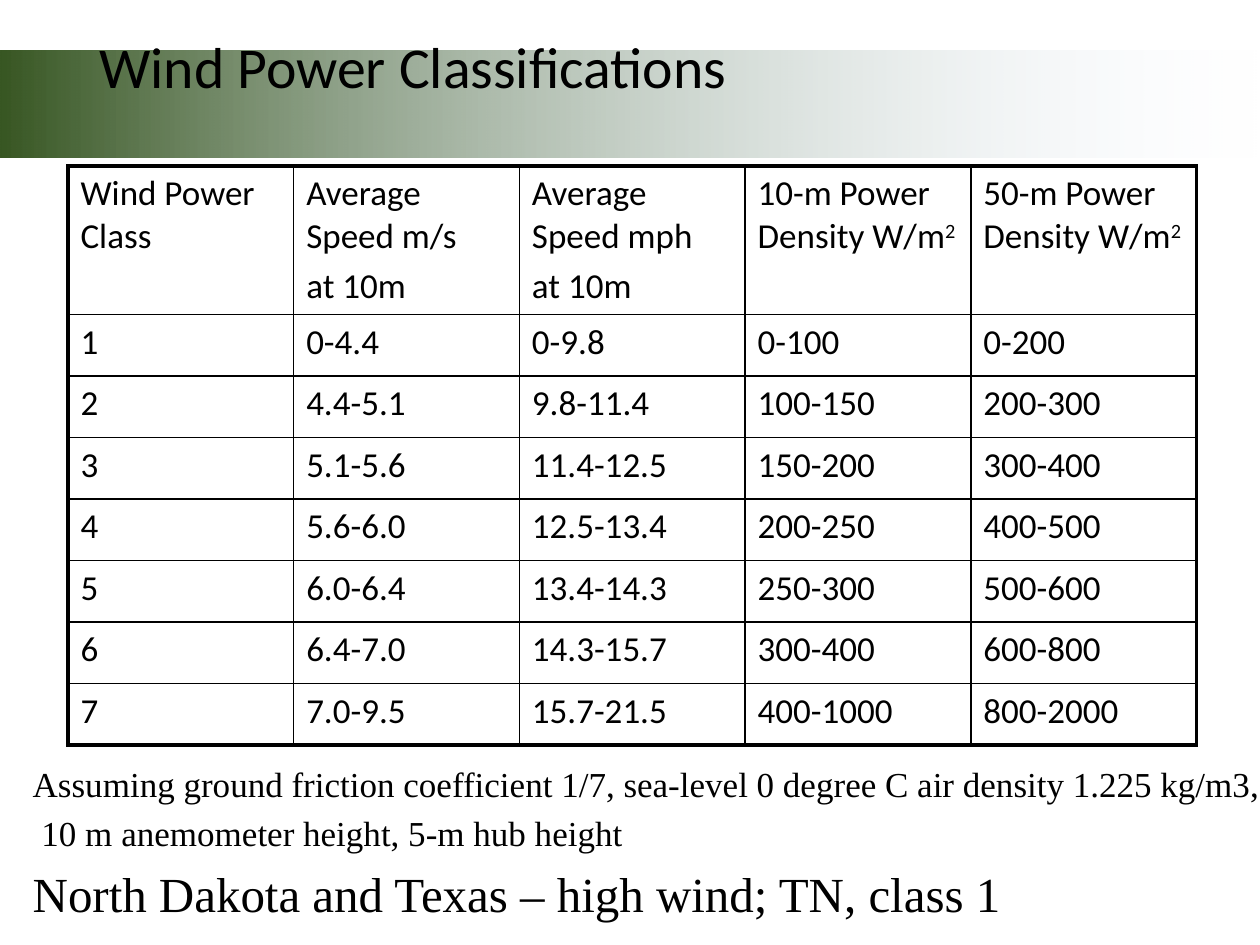
from lxml.etree import SubElement
from pptx import Presentation
from pptx.dml.color import RGBColor
from pptx.enum.shapes import MSO_SHAPE
from pptx.enum.text import MSO_ANCHOR, MSO_AUTO_SIZE, PP_ALIGN
from pptx.oxml.ns import qn
from pptx.util import Cm, Pt

COLORS = {"text": "000000", "border": "000000", "green": "385723", "pale": "E1EBFB"}
TITLE = "Wind Power Classifications"
TITLE_SIZE = 33
HEADERS = [
    [["Wind Power Class"]],
    [["Average Speed m/s"], ["at 10m"]],
    [["Average Speed mph"], ["at 10m"]],
    [["10-m Power Density W/m", "2"]],
    [["50-m Power Density W/m", "2"]],
]
CLASSES = [
    ("1", "0-4.4", "0-9.8", "0-100", "0-200"),
    ("2", "4.4-5.1", "9.8-11.4", "100-150", "200-300"),
    ("3", "5.1-5.6", "11.4-12.5", "150-200", "300-400"),
    ("4", "5.6-6.0", "12.5-13.4", "200-250", "400-500"),
    ("5", "6.0-6.4", "13.4-14.3", "250-300", "500-600"),
    ("6", "6.4-7.0", "14.3-15.7", "300-400", "600-800"),
    ("7", "7.0-9.5", "15.7-21.5", "400-1000", "800-2000"),
]
NOTES = [
    ("Assuming ground friction coefficient 1/7, sea-level 0 degree C air density 1.225 kg/m3,", 20),
    (" 10 m anemometer height, 5-m hub height", 20),
    ("North Dakota and Texas – high wind; TN, class 1", 28),
]
COL_W, HEAD_H, ROW_H = 4.55, 2.82, 1.24
INNER, OUTER = 1, 2.25


def rgb(name):
    return RGBColor.from_string(COLORS[name])


def add_run(p, text, size, name="Calibri"):
    r = p.add_run()
    r.text = text
    for key, value in {"size": Pt(size), "name": name, "bold": False}.items():
        setattr(r.font, key, value)
    r.font.color.rgb = rgb("text")
    return r


def add_paragraph(tf, i, size):
    p = tf.paragraphs[0] if i == 0 else tf.add_paragraph()
    p.alignment = PP_ALIGN.LEFT
    p.space_before = Pt(size * 0.2)
    return p


def set_borders(cell, widths):
    tcPr = cell._tc.get_or_add_tcPr()
    for side, width in widths.items():
        ln = SubElement(tcPr, qn(f"a:ln{side}"), w=str(Pt(width)))
        fill = SubElement(ln, qn("a:solidFill"))
        SubElement(fill, qn("a:srgbClr"), val=COLORS["border"])


def add_band(s):
    sp = s.shapes.add_shape(MSO_SHAPE.RECTANGLE, 0, Cm(1.02), Cm(25.4), Cm(2.16))
    sp.shadow.inherit = False
    sp.line.fill.background()
    sp.fill.gradient()
    sp.fill.gradient_angle = 0
    for stop, name in zip(sp.fill.gradient_stops, ("green", "pale")):
        stop.color.rgb = rgb(name)
    last = list(sp._element.spPr.iter(qn("a:srgbClr")))[-1]
    SubElement(last, qn("a:alpha"), val="0")


def add_title(s):
    sp = s.shapes.title
    s.shapes._spTree.append(sp._element)
    box = {"left": 1.75, "top": 1.02, "width": 21.9, "height": 2.16}
    for key, value in box.items():
        setattr(sp, key, Cm(value))
    tf = sp.text_frame
    tf.vertical_anchor = MSO_ANCHOR.MIDDLE
    tf.auto_size = MSO_AUTO_SIZE.NONE
    p = tf.paragraphs[0]
    p.alignment = PP_ALIGN.LEFT
    p.line_spacing = 0.9
    add_run(p, TITLE, TITLE_SIZE)
    p.add_line_break()
    size = str(TITLE_SIZE * 100)
    SubElement(p._p[-1], qn("a:rPr"), sz=size)
    SubElement(p._p, qn("a:endParaRPr"), sz=size)


def add_classes(s):
    rows = [HEADERS] + [[[[value]] for value in row] for row in CLASSES]
    n_rows, n_cols = len(rows), len(HEADERS)
    height = HEAD_H + ROW_H * len(CLASSES)
    table = s.shapes.add_table(
        n_rows, n_cols, Cm(1.37), Cm(3.35), Cm(COL_W * n_cols), Cm(height)
    ).table
    table.first_row = table.horz_banding = False
    for col in table.columns:
        col.width = Cm(COL_W)
    for i, row in enumerate(rows):
        table.rows[i].height = Cm(ROW_H if i else HEAD_H)
        for j, paragraphs in enumerate(row):
            cell = table.cell(i, j)
            edges = {"L": j == 0, "R": j == n_cols - 1, "T": i == 0, "B": i == n_rows - 1}
            set_borders(cell, {side: OUTER if edge else INNER for side, edge in edges.items()})
            cell.fill.background()
            for k, (text, *powers) in enumerate(paragraphs):
                p = add_paragraph(cell.text_frame, k, 20)
                add_run(p, text, 20)
                for power in powers:
                    add_run(p, power, 20).font._element.set("baseline", "30000")


def add_notes(s):
    tf = s.shapes.add_textbox(Cm(0.41), Cm(15.24), Cm(25.4), Cm(3.58)).text_frame
    tf.word_wrap = False
    tf.auto_size = MSO_AUTO_SIZE.SHAPE_TO_FIT_TEXT
    for i, (text, size) in enumerate(NOTES):
        add_run(add_paragraph(tf, i, size), text, size, "Times New Roman")


def main():
    prs = Presentation()
    prs.slide_width, prs.slide_height = Cm(25.4), Cm(19.05)
    s = prs.slides.add_slide(prs.slide_layouts[5])
    add_band(s)
    add_classes(s)
    add_notes(s)
    add_title(s)
    prs.save("out.pptx")


if __name__ == "__main__":
    main()
